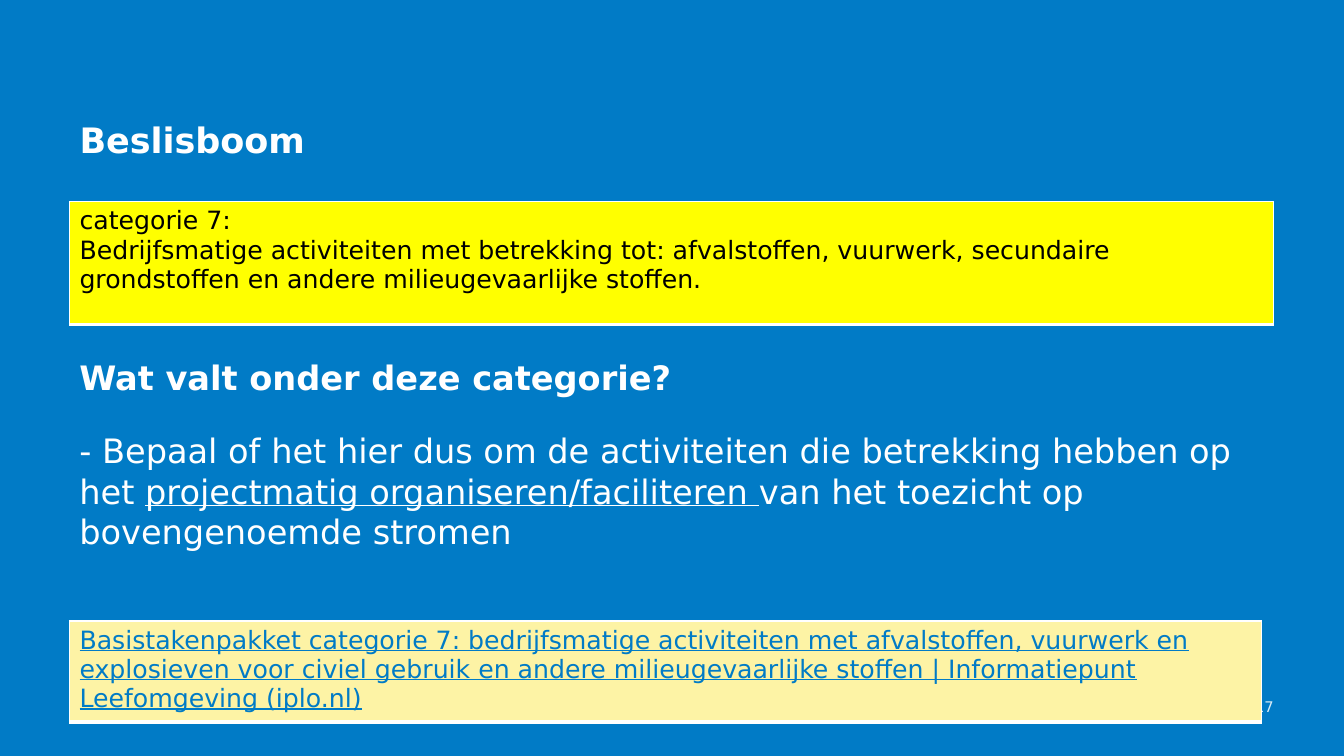
from lxml import etree
from pptx import Presentation
from pptx.dml.color import RGBColor
from pptx.enum.text import MSO_ANCHOR, MSO_AUTO_SIZE, PP_ALIGN
from pptx.oxml.ns import qn
from pptx.util import Cm, Pt

TOP, BOTTOM = MSO_ANCHOR.TOP, MSO_ANCHOR.BOTTOM
NO_AUTOFIT = MSO_AUTO_SIZE.NONE
LEFT, RIGHT = PP_ALIGN.LEFT, PP_ALIGN.RIGHT

BLUE = RGBColor(0x01, 0x7B, 0xC6)
PALE_BLUE = RGBColor(0xD9, 0xEB, 0xF6)
WHITE = RGBColor(0xFF, 0xFF, 0xFF)
BLACK = RGBColor(0x00, 0x00, 0x00)
YELLOW = RGBColor(0xFF, 0xFF, 0x00)
CREAM = RGBColor(0xFD, 0xF3, 0xA5)

FONT = "DejaVu Sans"
MARGIN = Cm(1.75)
FULL_WIDTH = Cm(30.35)
BORDERS = {"a:lnL": 1, "a:lnR": 1, "a:lnT": 1, "a:lnB": 3}


def style(para, size, color, bold=False, underline=False):
    font = para.font
    font.name, font.size = FONT, Pt(size)
    font.bold, font.underline = bold, underline
    font.color.rgb = color


def add_title(page, text, left, top, width, height):
    title = page.shapes.title
    title.left, title.top, title.width, title.height = left, top, width, height
    frame = title.text_frame
    frame.text = text
    frame.word_wrap = True
    frame.auto_size = NO_AUTOFIT
    frame.vertical_anchor = TOP
    para = frame.paragraphs[0]
    para.alignment = LEFT
    para.line_spacing = 0.9
    style(para, 25, WHITE, bold=True)


def add_text(page, spans, left, top, width, height, size=24, color=WHITE, bold=False):
    """Add a text box from (text, underlined) spans and return its frame."""
    frame = page.shapes.add_textbox(left, top, width, height).text_frame
    frame.word_wrap = True
    para = frame.paragraphs[0]
    style(para, size, color, bold)
    for text, underlined in spans:
        span = para.add_run()
        span.text = text
        if underlined:
            span.font.underline = True
    return frame


def add_page_number(page, number, left, top, width, height):
    frame = add_text(page, [(number, False)], left, top, width, height, 10.5, PALE_BLUE)
    frame.margin_right = 0
    frame.vertical_anchor = BOTTOM
    frame.paragraphs[0].alignment = RIGHT


def add_borders(cell):
    properties = cell._tc.get_or_add_tcPr()
    for index, (tag, points) in enumerate(BORDERS.items()):
        line = etree.Element(qn(tag), w=str(Pt(points)))
        fill = etree.SubElement(line, qn("a:solidFill"))
        etree.SubElement(fill, qn("a:srgbClr"), val=str(WHITE))
        properties.insert(index, line)


def add_banner(page, text, left, top, width, height, fill, color, underline=False):
    """Add a one-cell table with white borders."""
    table = page.shapes.add_table(1, 1, left, top, width, height).table
    table.first_row = table.horz_banding = False
    cell = table.cell(0, 0)
    cell.text = text
    cell.fill.solid()
    cell.fill.fore_color.rgb = fill
    style(cell.text_frame.paragraphs[0], 18, color, underline=underline)
    add_borders(cell)


def build_decision_page(deck):
    page = deck.slides.add_slide(deck.slide_layouts[5])
    background = page.background.fill
    background.solid()
    background.fore_color.rgb = BLUE

    add_title(page, "Beslisboom", MARGIN, Cm(2.97), FULL_WIDTH, Cm(11.18))
    add_page_number(page, "17", Cm(18.21), Cm(17.27), Cm(13.89), Cm(0.89))
    add_banner(
        page,
        "categorie 7:\vBedrijfsmatige activiteiten met betrekking tot: afvalstoffen, "
        "vuurwerk, secundaire grondstoffen en andere milieugevaarlijke stoffen.",
        MARGIN, Cm(5.08), FULL_WIDTH, Cm(3.1), YELLOW, BLACK)
    add_text(page, [("Wat valt onder deze categorie?", False)],
             MARGIN, Cm(8.86), Cm(16.94), Cm(1.27), bold=True)
    add_text(
        page,
        [("- Bepaal of het hier dus om de activiteiten die betrekking hebben op het ", False),
         ("projectmatig organiseren/faciliteren ", True),
         ("van het toezicht op bovengenoemde stromen", False)],
        MARGIN, Cm(10.72), Cm(29.64), Cm(3.33))
    add_banner(
        page,
        "Basistakenpakket categorie 7: bedrijfsmatige activiteiten met afvalstoffen, "
        "vuurwerk en explosieven voor civiel gebruik en andere milieugevaarlijke stoffen "
        "| Informatiepunt Leefomgeving (iplo.nl)",
        MARGIN, Cm(15.65), Cm(30.05), Cm(2.54), CREAM, BLUE, underline=True)


def main():
    deck = Presentation()
    deck.slide_width, deck.slide_height = Cm(33.87), Cm(19.05)
    build_decision_page(deck)
    deck.save("out.pptx")


if __name__ == "__main__":
    main()
